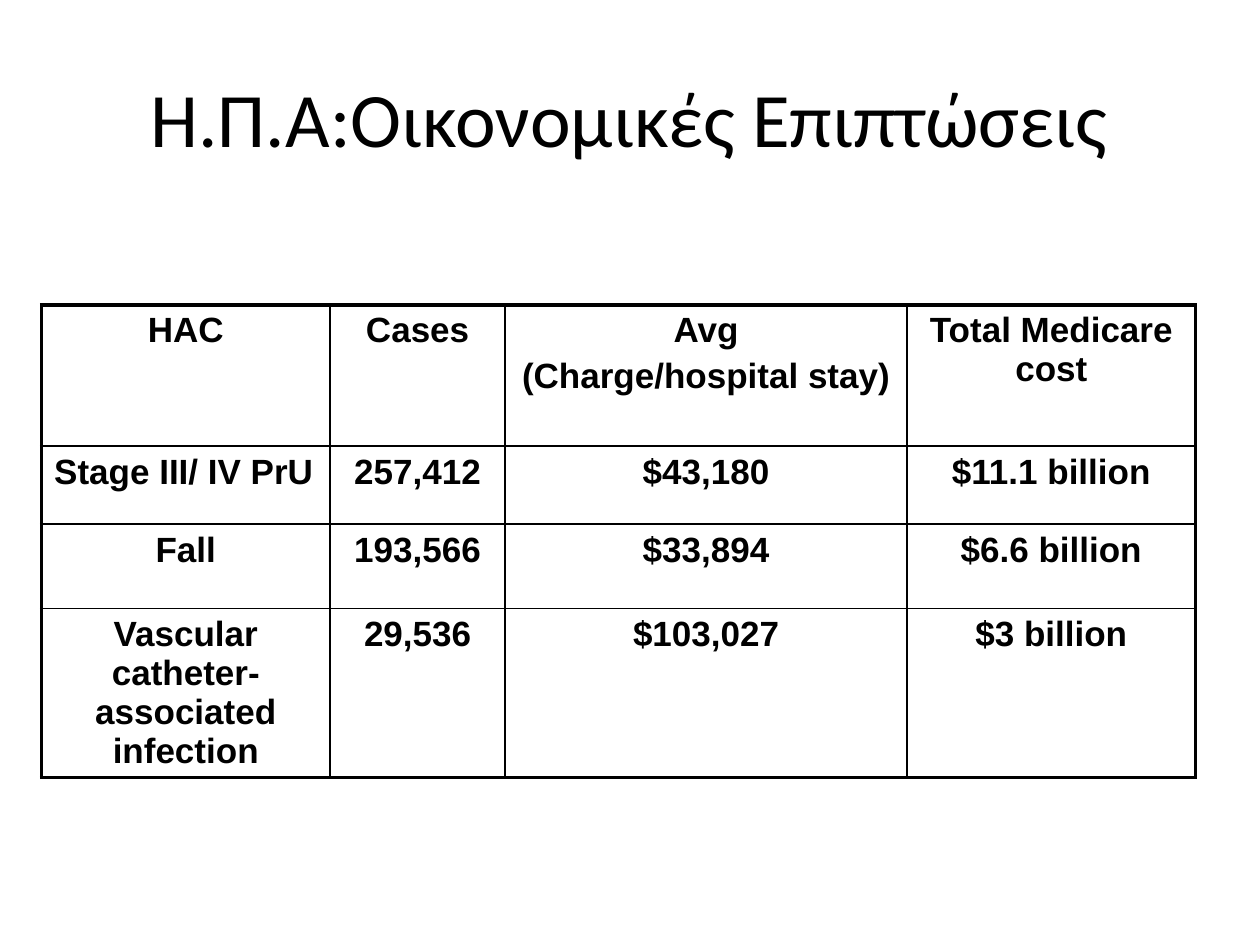
from dataclasses import dataclass

from lxml.etree import SubElement
from pptx import Presentation
from pptx.dml.color import RGBColor
from pptx.enum.text import MSO_ANCHOR, PP_ALIGN
from pptx.oxml.ns import qn
from pptx.table import Table, _Cell
from pptx.text.text import TextFrame
from pptx.util import Inches, Pt


@dataclass(frozen=True)
class Theme:
    ink: str = "000000"
    paper: str = "FFFFFF"
    title_font: str = "Calibri"
    table_font: str = "Arial"
    title_size: float = 44
    table_size: float = 20
    outer_line: float = 2.25
    inner_line: float = 1


@dataclass(frozen=True)
class CostRow:
    height: float
    condition: str
    cases: str
    charge: str
    total: str
    condition_align: PP_ALIGN = PP_ALIGN.CENTER


THEME = Theme()
COLUMN_WIDTHS = (2.29, 1.39, 3.19, 2.29)
ROWS = (
    CostRow(1.12, "HAC", "Cases", "Avg\n(Charge/hospital stay)", "Total Medicare cost"),
    CostRow(0.62, "Stage III/ IV PrU", "257,412", "$43,180", "$11.1 billion", PP_ALIGN.LEFT),
    CostRow(0.67, "Fall", "193,566", "$33,894", "$6.6 billion"),
    CostRow(1.12, "Vascular catheter-associated infection", "29,536", "$103,027", "$3 billion"),
)


def write_text(frame: TextFrame, text: str, *, font: str, size: float, bold: bool = False,
               align: PP_ALIGN = PP_ALIGN.CENTER, space_before: float = 0) -> None:
    """Write one paragraph per line of text."""
    frame.text = text
    for para in frame.paragraphs:
        para.alignment = align
        para.space_before = Pt(space_before)
        for span in para.runs:
            span.font.name = font
            span.font.size = Pt(size)
            span.font.bold = bold
            span.font.color.rgb = RGBColor.from_string(THEME.ink)


def draw_borders(cell: _Cell, widths: dict[str, float]) -> None:
    """Add the border lines, which come before the fill in the cell's XML."""
    properties = cell._tc.get_or_add_tcPr()
    for position, (side, width) in enumerate(widths.items()):
        line = SubElement(properties, qn(f"a:ln{side}"), w=str(int(Pt(width))))
        fill = SubElement(line, qn("a:solidFill"))
        SubElement(fill, qn("a:srgbClr"), val=THEME.ink)
        properties.insert(position, line)


def fill_row(table: Table, row_index: int, row: CostRow) -> None:
    table.rows[row_index].height = Inches(row.height)
    last_row, last_column = len(ROWS) - 1, len(COLUMN_WIDTHS) - 1
    for column_index, text in enumerate((row.condition, row.cases, row.charge, row.total)):
        cell = table.cell(row_index, column_index)
        write_text(cell.text_frame, text, font=THEME.table_font, size=THEME.table_size, bold=True,
                   align=row.condition_align if column_index == 0 else PP_ALIGN.CENTER,
                   space_before=THEME.table_size * 0.2)
        cell.fill.solid()
        cell.fill.fore_color.rgb = RGBColor.from_string(THEME.paper)
        on_edge = {"L": column_index == 0, "R": column_index == last_column,
                   "T": row_index == 0, "B": row_index == last_row}
        draw_borders(cell, {side: THEME.outer_line if outer else THEME.inner_line
                            for side, outer in on_edge.items()})


def main() -> None:
    deck = Presentation()
    deck.slide_width, deck.slide_height = Inches(10), Inches(7.5)
    page = deck.slides.add_slide(deck.slide_layouts[5])

    # Title
    title = page.shapes.title
    title.left, title.top = Inches(0.5), Inches(0.3)
    title.width, title.height = Inches(9), Inches(1.25)
    title.text_frame.vertical_anchor = MSO_ANCHOR.MIDDLE
    write_text(title.text_frame, "Η.Π.Α:Οικονομικές Επιπτώσεις",
               font=THEME.title_font, size=THEME.title_size)

    # Cost table
    table = page.shapes.add_table(
        len(ROWS), len(COLUMN_WIDTHS), Inches(0.33), Inches(2.42),
        Inches(sum(COLUMN_WIDTHS)), Inches(sum(row.height for row in ROWS))).table
    table.first_row = table.horz_banding = False
    for column, width in zip(table.columns, COLUMN_WIDTHS):
        column.width = Inches(width)
    for row_index, row in enumerate(ROWS):
        fill_row(table, row_index, row)

    deck.save("out.pptx")


if __name__ == "__main__":
    main()
